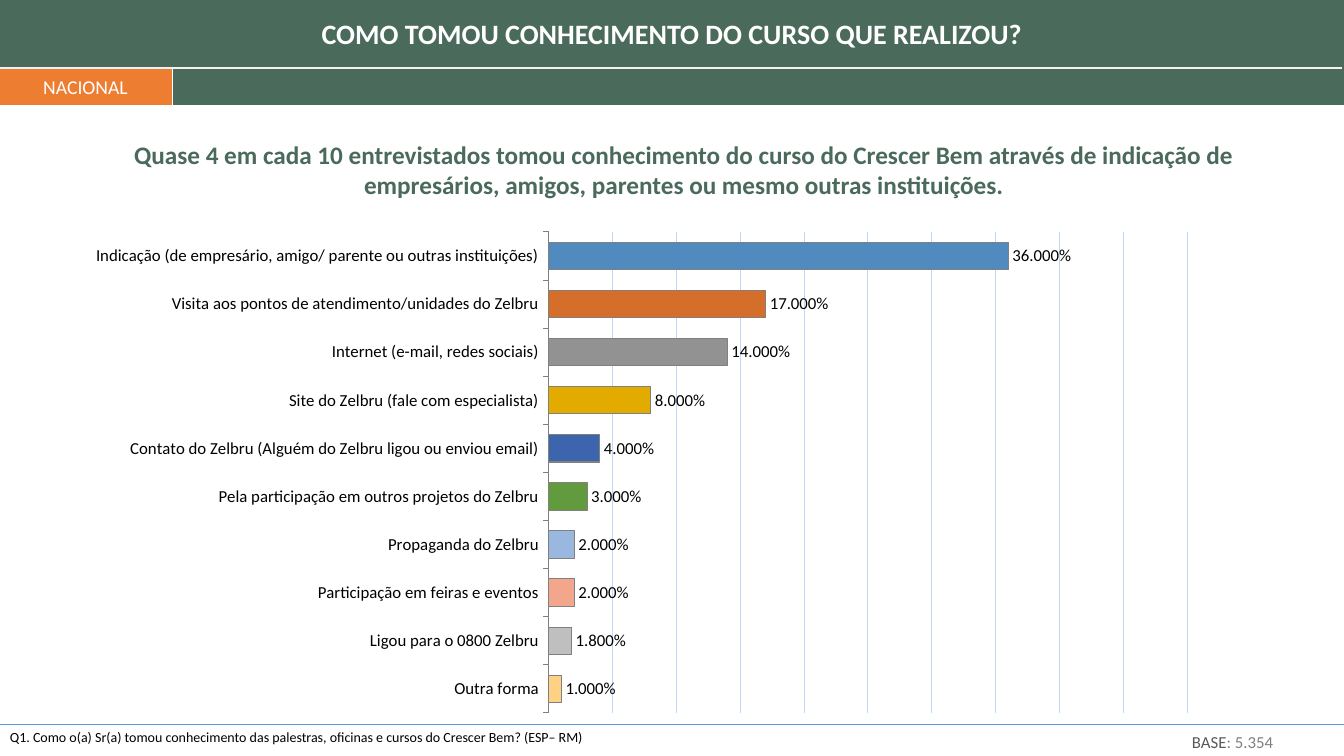
import pptx
import pptx.chart.data
import pptx.dml.color
import pptx.enum.chart
import pptx.enum.shapes
import pptx.enum.text
import pptx.oxml
import pptx.oxml.ns
import pptx.util
from lxml import etree

RGBColor = pptx.dml.color.RGBColor
Align = pptx.enum.text.PP_ALIGN

PX = 914400 / 100.8
FONT = "Calibri"
WHITE = RGBColor(0xFF, 0xFF, 0xFF)
BLACK = RGBColor(0, 0, 0)
GREEN = RGBColor(0x4A, 0x6A, 0x5C)
ORANGE = RGBColor(0xED, 0x7D, 0x31)
BLUE = RGBColor(0x5B, 0x9B, 0xD5)
PALE = RGBColor(0xF2, 0xF2, 0xF2)
GRID = RGBColor(0xC2, 0xD8, 0xF8)
GRAY = RGBColor(0x80, 0x80, 0x80)
DARK_GRAY = RGBColor(0x59, 0x59, 0x59)

PERCENT = "#.#00%"
ANSWERS = [
    ("Indicação (de empresário, amigo/ parente ou outras instituições)", 0.36, RGBColor(0x50, 0x8A, 0xBF)),
    ("Visita aos pontos de atendimento/unidades do Zelbru", 0.17, RGBColor(0xD4, 0x6E, 0x2A)),
    ("Internet (e-mail, redes sociais)", 0.14, RGBColor(0x92, 0x92, 0x92)),
    ("Site do Zelbru (fale com especialista)", 0.08, RGBColor(0xE3, 0xAB, 0x00)),
    ("Contato do Zelbru (Alguém do Zelbru ligou ou enviou email)", 0.04, RGBColor(0x3C, 0x65, 0xAE)),
    ("Pela participação em outros projetos do Zelbru", 0.03, RGBColor(0x62, 0x9A, 0x3E)),
    ("Propaganda do Zelbru", 0.02, RGBColor(0x9A, 0xB7, 0xDF)),
    ("Participação em feiras e eventos", 0.02, RGBColor(0xF2, 0xA7, 0x8D)),
    ("Ligou para o 0800 Zelbru", 0.018, RGBColor(0xBF, 0xBF, 0xBF)),
    ("Outra forma", 0.01, RGBColor(0xFF, 0xD1, 0x84)),
]


def emu(*lengths):
    return [round(length * PX) for length in lengths]


def style_font(font, size, color, bold=False):
    font.name = FONT
    font.size = pptx.util.Pt(size)
    font.bold = bold
    font.color.rgb = color


def style_line(line, color, width):
    line.color.rgb = color
    line.width = pptx.util.Pt(width)


def add_text(slide, box, text, size, color, bold=False, align=Align.LEFT):
    shape = slide.shapes.add_textbox(*emu(*box))
    frame = shape.text_frame
    frame.word_wrap = True
    frame.auto_size = pptx.enum.text.MSO_AUTO_SIZE.SHAPE_TO_FIT_TEXT
    paragraph = frame.paragraphs[0]
    paragraph.text = text
    paragraph.alignment = align
    style_font(paragraph.font, size, color, bold)
    return paragraph


def add_band(slide, box, color):
    shape = slide.shapes.add_shape(pptx.enum.shapes.MSO_SHAPE.RECTANGLE, *emu(*box))
    shape.shadow.inherit = False
    shape.fill.solid()
    shape.fill.fore_color.rgb = color
    shape.line.fill.background()
    return shape


def add_rule(slide, ends, color, width):
    rule = slide.shapes.add_connector(pptx.enum.shapes.MSO_CONNECTOR.STRAIGHT, *emu(*ends))
    style_line(rule.line, color, width)
    etree.SubElement(rule._element.spPr, pptx.oxml.ns.qn("a:effectLst"))


def place_plot(chart, x, y, width, height):
    """Fix the inner plot area, in fractions of the chart."""
    plot_area = chart._chartSpace.chart.plotArea
    for layout in plot_area.findall(pptx.oxml.ns.qn("c:layout")):
        plot_area.remove(layout)
    plot_area.insert(0, pptx.oxml.parse_xml(
        f'<c:layout {pptx.oxml.ns.nsdecls("c")}><c:manualLayout>'
        '<c:layoutTarget val="inner"/><c:xMode val="edge"/><c:yMode val="edge"/>'
        f'<c:x val="{x}"/><c:y val="{y}"/><c:w val="{width}"/><c:h val="{height}"/>'
        '</c:manualLayout></c:layout>'))


def add_answer_chart(slide, box):
    data = pptx.chart.data.CategoryChartData(number_format=PERCENT)
    data.categories = [name for name, _, _ in ANSWERS]
    data.add_series("Series 1", [share for _, share, _ in ANSWERS])
    kind = pptx.enum.chart.XL_CHART_TYPE.BAR_CLUSTERED
    chart = slide.shapes.add_chart(kind, *emu(*box), data).chart
    chart.has_legend = False
    chart.has_title = False
    style_font(chart.font, 18, BLACK)
    place_plot(chart, 0.42, 0.02, 0.56, 0.96)

    # Axes
    categories = chart.category_axis
    categories.reverse_order = True
    categories.major_tick_mark = pptx.enum.chart.XL_TICK_MARK.OUTSIDE
    style_font(categories.tick_labels.font, 12, BLACK)
    style_line(categories.format.line, GRAY, 0.75)
    values = chart.value_axis
    values.visible = False
    values.minimum_scale, values.maximum_scale, values.major_unit = 0, 0.5, 0.05
    values.has_major_gridlines = True
    style_line(values.major_gridlines.format.line, GRID, 0.75)

    # Bars and labels
    plot = chart.plots[0]
    plot.gap_width, plot.overlap = 76, -45
    plot.vary_by_categories = False
    series = plot.series[0]
    for index, (_, _, color) in enumerate(ANSWERS):
        bar = series.points[index].format
        bar.fill.solid()
        bar.fill.fore_color.rgb = color
        style_line(bar.line, GRAY, 0.75)
    labels = series.data_labels
    labels.show_value = True
    labels.number_format = PERCENT
    labels.number_format_is_linked = False
    labels.position = pptx.enum.chart.XL_LABEL_POSITION.OUTSIDE_END
    style_font(labels.font, 12, BLACK)


def main():
    presentation = pptx.Presentation()
    presentation.slide_width, presentation.slide_height = emu(1344, 756)
    slide = presentation.slides.add_slide(presentation.slide_layouts[6])

    # Footer question
    add_rule(slide, (0, 724, 1344, 724), BLUE, 0.5)
    add_text(slide, (0, 724, 1344, 27),
             "Q1. Como o(a) Sr(a) tomou conhecimento das palestras, oficinas "
             "e cursos do Crescer Bem? (ESP– RM)", 10, BLACK)

    # Header
    add_band(slide, (-1, 0, 1345, 105), GREEN)
    add_text(slide, (0, 12, 1344, 44), "COMO TOMOU CONHECIMENTO DO CURSO QUE REALIZOU?",
             20, WHITE, True, Align.CENTER)
    scope = add_band(slide, (-1, 68, 173, 37), ORANGE)
    scope.text_frame.vertical_anchor = pptx.enum.text.MSO_ANCHOR.MIDDLE
    paragraph = scope.text_frame.paragraphs[0]
    paragraph.text = "NACIONAL"
    paragraph.alignment = Align.CENTER
    style_font(paragraph.font, 14, WHITE)
    add_rule(slide, (172, 105, 172, 68), WHITE, 0.5)
    add_rule(slide, (-3, 68, 1342, 68), PALE, 1)

    # Chart and its message
    add_answer_chart(slide, (70, 222, 1140, 501))
    add_text(slide, (59, 134, 1250, 72),
             "Quase 4 em cada 10 entrevistados tomou conhecimento do curso do "
             "Crescer Bem através de indicação de empresários, amigos, parentes "
             "ou mesmo outras instituições.", 18, GREEN, True, Align.CENTER)

    # Sample size
    base = add_text(slide, (1182, 727, 106, 30), "BASE", 12, DARK_GRAY)
    count = base.add_run()
    count.text = ": 5.354"
    count.font.color.rgb = GRAY

    presentation.save("out.pptx")


if __name__ == "__main__":
    main()
